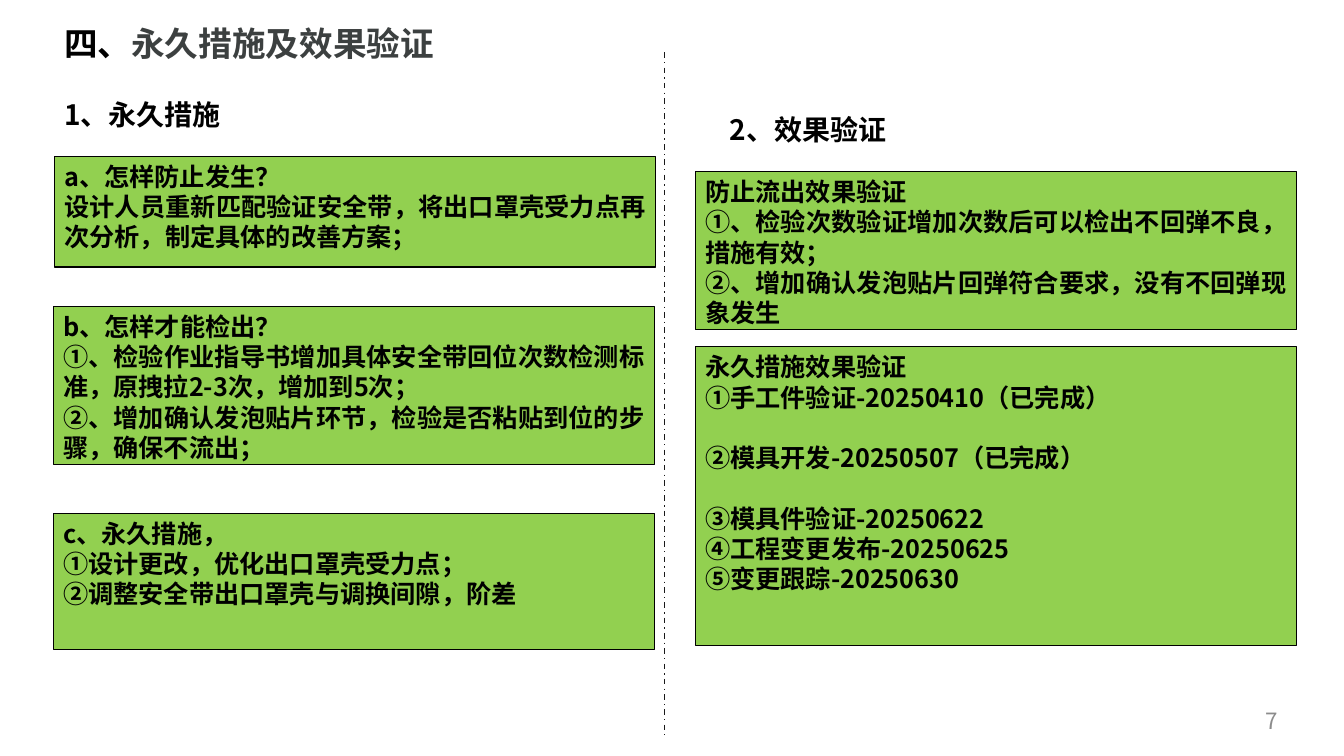
from lxml.etree import SubElement
from pptx import Presentation
from pptx.dml.color import RGBColor
from pptx.enum.dml import MSO_LINE_DASH_STYLE as Dash
from pptx.enum.lang import MSO_LANGUAGE_ID as Language
from pptx.enum.shapes import MSO_CONNECTOR as Connector, MSO_SHAPE as Shape
from pptx.enum.text import MSO_ANCHOR as Anchor, PP_ALIGN as Align
from pptx.oxml.ns import qn
from pptx.util import Cm, Pt

FONT = "Noto Sans CJK SC"
BLACK = RGBColor(0x00, 0x00, 0x00)
TITLE_GRAY = RGBColor(0x3C, 0x40, 0x40)
NUMBER_GRAY = RGBColor(0x8C, 0x8C, 0x8C)
DIVIDER = RGBColor(0x19, 0x19, 0x19)
GREEN = RGBColor(0x92, 0xD0, 0x50)

PANEL_WIDTH = 15.16
LINE_GAP = Pt(21.7)  # height of one text line at 18 pt

# left, top, height in cm; lines; indexes of lines followed by a gap
PANELS = [
    (1.37, 3.94, 2.79, [
        "a、怎样防止发生？",
        "设计人员重新匹配验证安全带，将出口罩壳受力点再次分析，制定具体的改善方案；",
    ], ()),
    (1.34, 7.72, 3.99, [
        "b、怎样才能检出？",
        "①、检验作业指导书增加具体安全带回位次数检测标准，原拽拉2-3次，增加到5次；",
        "②、增加确认发泡贴片环节，检验是否粘贴到位的步骤，确保不流出；",
    ], ()),
    (1.34, 12.93, 3.43, [
        "c、永久措施，",
        "①设计更改，优化出口罩壳受力点；",
        "②调整安全带出口罩壳与调换间隙，阶差",
    ], ()),
    (17.52, 4.32, 3.99, [
        "防止流出效果验证",
        "①、检验次数验证增加次数后可以检出不回弹不良，措施有效；",
        "②、增加确认发泡贴片回弹符合要求，没有不回弹现象发生",
    ], ()),
    (17.52, 8.74, 7.52, [
        "永久措施效果验证",
        "①手工件验证-20250410（已完成）",
        "②模具开发-20250507（已完成）",
        "③模具件验证-20250622",
        "④工程变更发布-20250625",
        "⑤变更跟踪-20250630",
    ], (1, 2)),
]


def format_run(run, size, color=BLACK, bold=True):
    font = run.font
    font.size = Pt(size)
    font.bold = bold
    font.color.rgb = color
    font.name = FONT
    font.language_id = Language.SIMPLIFIED_CHINESE
    SubElement(font._element, qn("a:ea"), typeface=FONT)


def add_text(slide, left, top, width, height, parts, size, bold=True):
    """Add a one-paragraph text box from (text, color) parts."""
    box = slide.shapes.add_textbox(Cm(left), Cm(top), Cm(width), Cm(height))
    box.text_frame.word_wrap = True
    for text, color in parts:
        run = box.text_frame.paragraphs[0].add_run()
        run.text = text
        format_run(run, size, color, bold)
    return box.text_frame


def add_panel(slide, left, top, height, lines, gaps):
    shape = slide.shapes.add_shape(
        Shape.RECTANGLE, Cm(left), Cm(top), Cm(PANEL_WIDTH), Cm(height))
    shape.shadow.inherit = False
    shape.fill.solid()
    shape.fill.fore_color.rgb = GREEN
    shape.line.color.rgb = BLACK
    shape.line.width = Pt(0.75)
    frame = shape.text_frame
    frame.word_wrap = True
    frame.vertical_anchor = Anchor.TOP
    frame.text = "\n".join(lines)
    for index, paragraph in enumerate(frame.paragraphs):
        paragraph.alignment = Align.JUSTIFY
        if index in gaps:
            paragraph.space_after = LINE_GAP
        format_run(paragraph.runs[0], 18)


def add_divider(slide, x, top, bottom):
    line = slide.shapes.add_connector(
        Connector.STRAIGHT, Cm(x), Cm(top), Cm(x), Cm(bottom))
    line.line.color.rgb = DIVIDER
    line.line.width = Pt(1)
    line.line.dash_style = Dash.DASH_DOT
    SubElement(line._element.spPr, qn("a:effectLst"))


def main():
    presentation = Presentation()
    presentation.slide_width = Cm(33.87)
    presentation.slide_height = Cm(19.05)
    slide = presentation.slides.add_slide(presentation.slide_layouts[6])

    # Title and page number
    add_text(slide, 1.37, 0.46, 28.14, 3.33,
             [("四、", BLACK), ("永久措施及效果验证", TITLE_GRAY)], 24)
    number = add_text(slide, 24.84, 17.65, 7.62, 1.02,
                      [("7", NUMBER_GRAY)], 16, bold=False)
    number.vertical_anchor = Anchor.MIDDLE
    number.paragraphs[0].alignment = Align.RIGHT

    # Column divider and headings
    add_divider(slide, 16.74, 1.32, 18.52)
    add_text(slide, 1.37, 2.34, 11.28, 1.12, [("1、永久措施", BLACK)], 20)
    add_text(slide, 18.14, 2.72, 11.28, 1.12, [("2、效果验证", BLACK)], 20)

    # Green panels
    for panel in PANELS:
        add_panel(slide, *panel)

    presentation.save("out.pptx")


if __name__ == "__main__":
    main()
